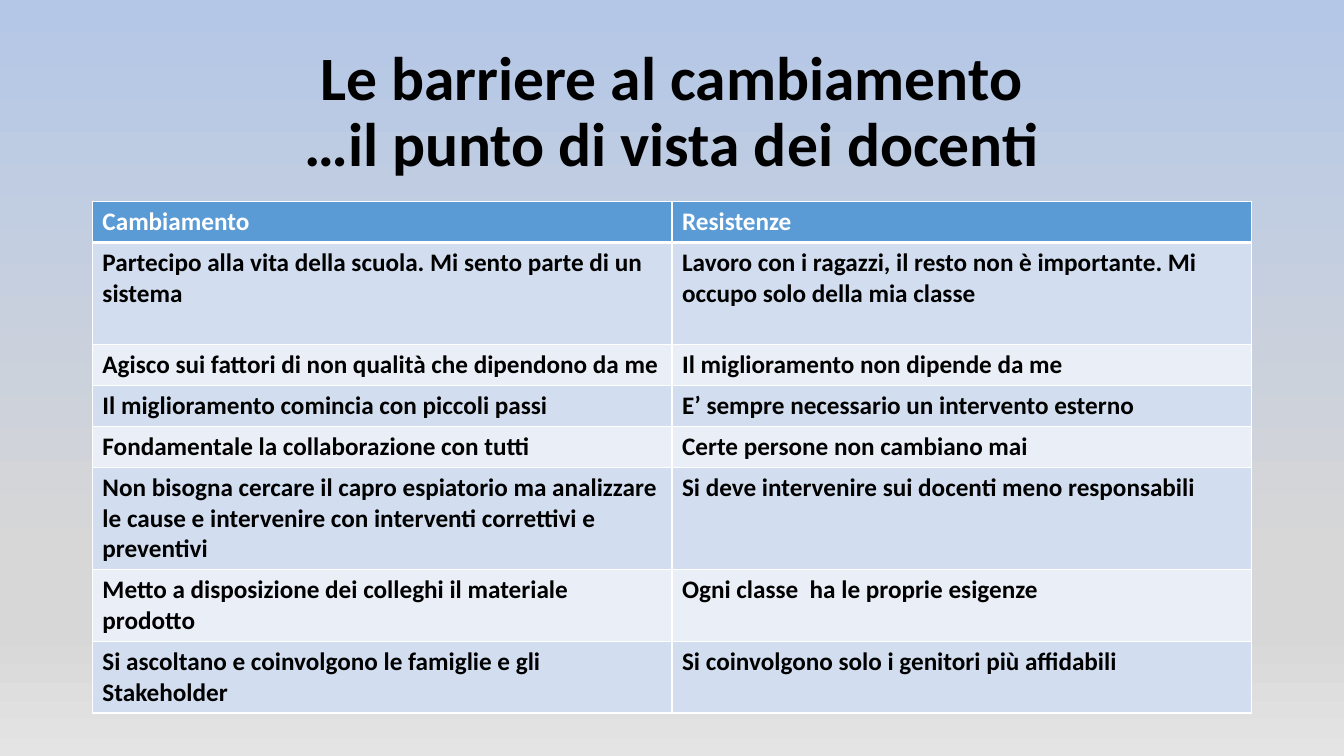
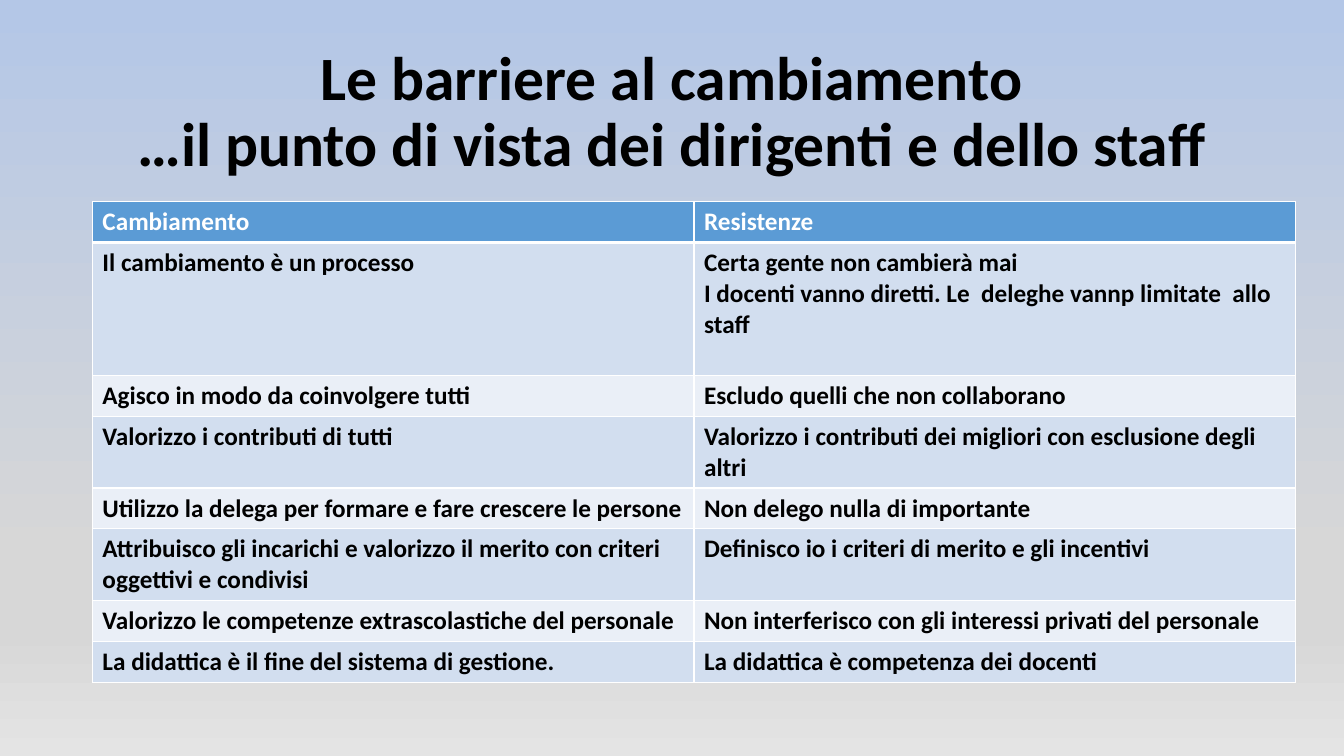
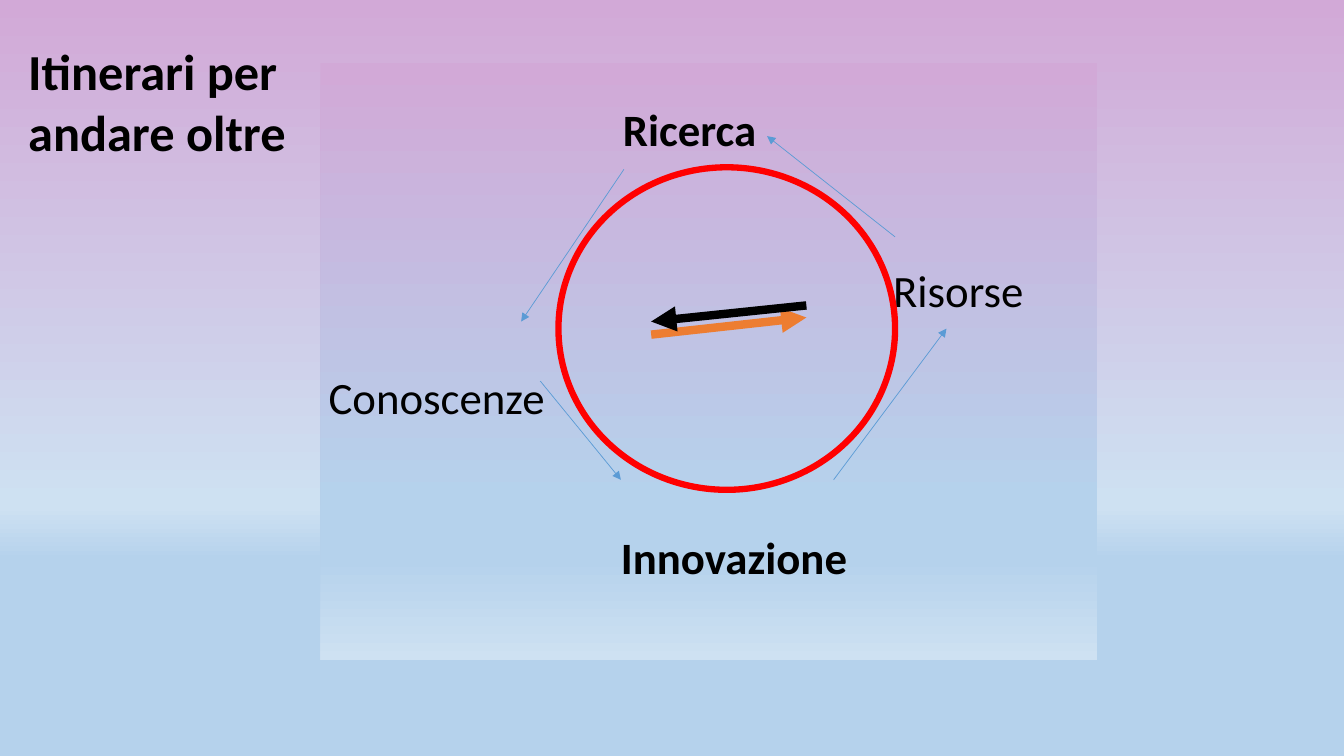
"""Builds three slides on barriers to change and on routes beyond them."""
from pptx import Presentation
from pptx.dml.color import RGBColor
from pptx.enum.shapes import MSO_CONNECTOR, MSO_SHAPE
from pptx.enum.text import MSO_ANCHOR, MSO_AUTO_SIZE, PP_ALIGN
from pptx.oxml.ns import qn
from pptx.util import Inches, Pt
from lxml import etree

STRAIGHT = MSO_CONNECTOR.STRAIGHT
RECTANGLE, OVAL = MSO_SHAPE.RECTANGLE, MSO_SHAPE.OVAL
TOP, MIDDLE = MSO_ANCHOR.TOP, MSO_ANCHOR.MIDDLE
LEFT, CENTER = PP_ALIGN.LEFT, PP_ALIGN.CENTER
NO_FIT = MSO_AUTO_SIZE.NONE

BLACK = RGBColor(0x00, 0x00, 0x00)
WHITE = RGBColor(0xFF, 0xFF, 0xFF)
BLUE = RGBColor(0x5B, 0x9B, 0xD5)
BAND_DARK = RGBColor(0xD2, 0xDE, 0xEF)
BAND_LIGHT = RGBColor(0xEA, 0xEF, 0xF7)
ORANGE = RGBColor(0xED, 0x7D, 0x31)
RED = RGBColor(0xFF, 0x00, 0x00)
PERIWINKLE = RGBColor(0xB4, 0xC7, 0xE7)
GREY = RGBColor(0xD7, 0xD7, 0xD7)
PALE_GREY = RGBColor(0xE4, 0xE4, 0xE4)
MAUVE = RGBColor(0xD2, 0xA9, 0xD7)
SKY = RGBColor(0xB5, 0xD2, 0xEC)
PALE_SKY = RGBColor(0xCE, 0xE1, 0xF2)

TABLE_PAGE = [(0, PERIWINKLE), (74, GREY), (83, GREY), (100, PALE_GREY)]
ROUTE_PAGE = [(0, MAUVE), (67, PALE_SKY), (74, SKY), (83, SKY)]
ROUTE_PANEL = [(0, MAUVE), (74, SKY), (83, SKY), (100, PALE_SKY)]

FONT = "Calibri"
COLUMNS, ROWS = 160, 90
WIDTH, HEIGHT = Inches(13.33), Inches(7.5)
CELL_PADDING, CELL_LINE = 1.2, 3.66

TEACHERS = [
    (1, "Cambiamento", "Resistenze"),
    (3, "Partecipo alla vita della scuola. Mi sento parte di un sistema",
     "Lavoro con i ragazzi, il resto non è importante. Mi occupo solo della mia classe"),
    (1, "Agisco sui fattori di non qualità che dipendono da me",
     "Il miglioramento non dipende da me"),
    (1, "Il miglioramento comincia con piccoli passi",
     "E’ sempre necessario un intervento esterno"),
    (1, "Fondamentale la collaborazione con tutti", "Certe persone non cambiano mai"),
    (3, "Non bisogna cercare il capro espiatorio ma analizzare le cause e intervenire "
        "con interventi correttivi e preventivi",
     "Si deve intervenire sui docenti meno responsabili"),
    (2, "Metto a disposizione dei colleghi il materiale prodotto",
     "Ogni classe  ha le proprie esigenze"),
    (2, "Si ascoltano e coinvolgono le famiglie e gli Stakeholder",
     "Si coinvolgono solo i genitori più affidabili"),
]
MANAGERS = [
    (1, "Cambiamento", "Resistenze"),
    (4, "Il cambiamento è un processo",
     "Certa gente non cambierà mai\n"
     "I docenti vanno diretti. Le  deleghe vannp limitate  allo staff"),
    (1, "Agisco in modo da coinvolgere tutti", "Escludo quelli che non collaborano"),
    (2, "Valorizzo i contributi di tutti",
     "Valorizzo i contributi dei migliori con esclusione degli altri"),
    (1, "Utilizzo la delega per formare e fare crescere le persone",
     "Non delego nulla di importante"),
    (2, "Attribuisco gli incarichi e valorizzo il merito con criteri oggettivi e condivisi",
     "Definisco io i criteri di merito e gli incentivi"),
    (1, "Valorizzo le competenze extrascolastiche del personale",
     "Non interferisco con gli interessi privati del personale"),
    (1, "La didattica è il fine del sistema di gestione.",
     "La didattica è competenza dei docenti"),
]
BARRIERS = [
    ("…il punto di vista dei docenti", 138, TEACHERS),
    ("…il punto di vista dei dirigenti e dello staff", 143.25, MANAGERS),
]

LABEL_TOP, LABEL_PITCH = 12.12, 6.37
LABELS = [
    ("Ricerca", 74.16, 0, True),
    ("Risorse", 106.32, 3, False),
    ("Conoscenze", 39.12, 5, False),
    ("Innovazione", 73.92, 8, True),
]
CYCLE_ARROWS = [
    ((106.56, 28.2), (91.32, 16.2)),
    ((64.32, 45.36), (73.92, 57.12)),
    ((74.28, 20.16), (62.04, 38.28)),
    ((99.24, 57.12), (112.68, 39.12)),
]


class Deck:
    """Holds the shared style and the current page."""

    def __init__(self):
        self.deck = Presentation()
        self.deck.slide_width, self.deck.slide_height = WIDTH, HEIGHT
        self.page = None

    def place(self, *lengths):
        units = (WIDTH / COLUMNS, HEIGHT / ROWS)
        return [round(length * units[index % 2]) for index, length in enumerate(lengths)]

    def gradient(self, fill, owner, stops):
        fill.gradient()
        fill.gradient_angle = 270
        stop_list = next(owner.element.iter(qn("a:gsLst")))
        for stop in list(stop_list):
            stop_list.remove(stop)
        for share, color in stops:
            stop = etree.SubElement(stop_list, qn("a:gs"), pos=str(share * 1000))
            etree.SubElement(stop, qn("a:srgbClr"), val=str(color))

    def new_page(self, stops):
        self.page = self.deck.slides.add_slide(self.deck.slide_layouts[5])
        self.gradient(self.page.background.fill, self.page, stops)

    def add_span(self, para, text, size, color=BLACK, bold=True):
        span = para.add_run()
        span.text = text
        span.font.name, span.font.size = FONT, Pt(size)
        span.font.color.rgb, span.font.bold = color, bold

    def title(self, lines, area, size, align=CENTER, anchor=MIDDLE, spacing=0.9):
        box = self.page.shapes.title
        box.left, box.top, box.width, box.height = self.place(*area)
        frame = box.text_frame
        frame.word_wrap, frame.auto_size = True, NO_FIT
        frame.vertical_anchor = anchor
        para = frame.paragraphs[0]
        para.alignment, para.line_spacing = align, spacing
        for index, line in enumerate(lines):
            if index:
                para.add_line_break()
            self.add_span(para, line, size)

    def borders(self, cell, top, bottom):
        properties = cell._tc.get_or_add_tcPr()
        for side, points in (("L", 1), ("R", 1), ("T", top), ("B", bottom)):
            line = etree.SubElement(properties, qn(f"a:ln{side}"), w=str(Pt(points)))
            paint = etree.SubElement(line, qn("a:solidFill"))
            etree.SubElement(paint, qn("a:srgbClr"), val=str(WHITE))

    def table(self, left, top, width, rows):
        heights = [CELL_PADDING + CELL_LINE * row[0] for row in rows]
        area = self.place(left, top, width, sum(heights))
        table = self.page.shapes.add_table(len(rows), 2, *area).table
        for column in table.columns:
            column.width = area[2] // 2
        for index, (lines, *texts) in enumerate(rows):
            table.rows[index].height = self.place(0, heights[index])[1]
            band = BAND_DARK if index % 2 else BAND_LIGHT
            for column, text in enumerate(texts):
                cell = table.cell(index, column)
                self.borders(cell, 3 if index == 1 else 1, 3 if index == 0 else 1)
                cell.fill.solid()
                cell.fill.fore_color.rgb = band if index else BLUE
                for number, line in enumerate(text.split("\n")):
                    frame = cell.text_frame
                    para = frame.add_paragraph() if number else frame.paragraphs[0]
                    self.add_span(para, line, 18, BLACK if index else WHITE)

    def panel(self, area, stops):
        shape = self.page.shapes.add_shape(RECTANGLE, *self.place(*area))
        shape.shadow.inherit = False
        shape.line.fill.background()
        self.gradient(shape.fill, shape, stops)

    def ring(self, area, color, points):
        shape = self.page.shapes.add_shape(OVAL, *self.place(*area))
        shape.shadow.inherit = False
        shape.fill.background()
        shape.line.color.rgb, shape.line.width = color, Pt(points)

    def label(self, text, left, top, bold):
        box = self.page.shapes.add_textbox(*self.place(left, top, 30, LABEL_PITCH))
        frame = box.text_frame
        frame.word_wrap = True
        frame.margin_left = frame.margin_right = 0
        frame.margin_top = frame.margin_bottom = 0
        self.add_span(frame.paragraphs[0], text, 32, bold=bold)

    def arrow(self, start, end, color, points):
        arrow = self.page.shapes.add_connector(STRAIGHT, *self.place(*start, *end))
        arrow.line.color.rgb, arrow.line.width = color, Pt(points)
        outline = arrow.element.spPr.find(qn("a:ln"))
        etree.SubElement(outline, qn("a:tailEnd"), type="triangle")
        etree.SubElement(arrow.element.spPr, qn("a:effectLst"))


def main():
    deck = Deck()
    for viewpoint, width, rows in BARRIERS:
        deck.new_page(TABLE_PAGE)
        deck.title(["Le barriere al cambiamento", viewpoint], (11, 4.8, 138, 17.4), 44)
        deck.table(11, 24, width, rows)

    deck.new_page(ROUTE_PAGE)
    deck.title(["Itinerari per andare oltre"], (2.16, 4.2, 33.84, 15.72), 36, LEFT, TOP, 1.0)
    deck.panel((38.16, 7.5, 92.5, 71.04), ROUTE_PANEL)
    for text, left, line, bold in LABELS:
        deck.label(text, left, LABEL_TOP + LABEL_PITCH * line, bold)
    for start, end in CYCLE_ARROWS:
        deck.arrow(start, end, BLUE, 0.5)
    deck.arrow((77.52, 39.84), (96, 37.8), ORANGE, 6)
    deck.arrow((96, 36.36), (77.52, 38.28), BLACK, 6)
    deck.ring((66.48, 19.92, 40.08, 38.4), RED, 4.5)
    deck.deck.save("out.pptx")


if __name__ == "__main__":
    main()
